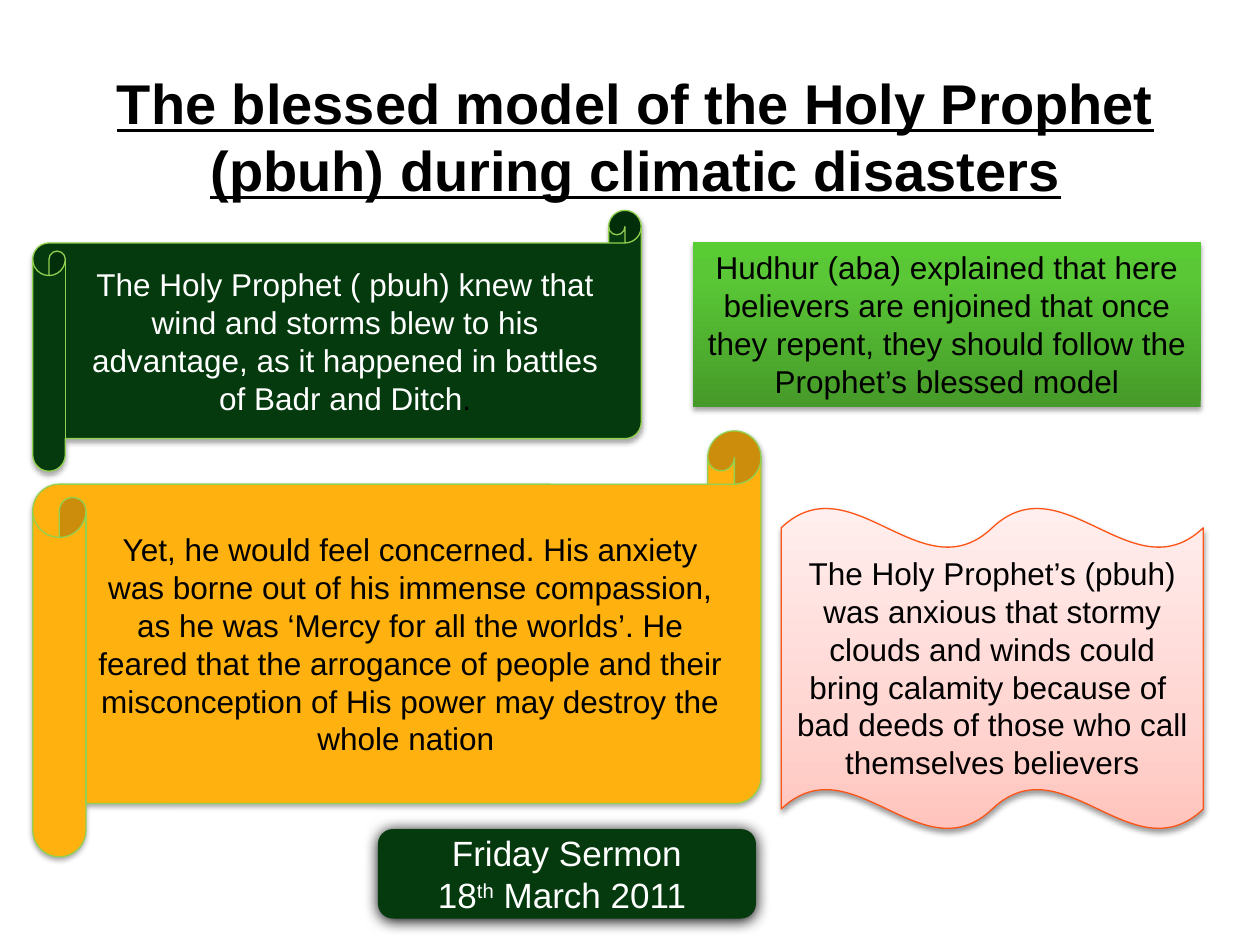
import copy
from dataclasses import dataclass
from typing import Optional

import lxml.etree
import pptx
import pptx.dml.color
import pptx.enum.shapes
import pptx.enum.text
import pptx.oxml.ns
import pptx.util

Inches = pptx.util.Inches
Pt = pptx.util.Pt
Kind = pptx.enum.shapes.MSO_SHAPE
Anchor = pptx.enum.text.MSO_ANCHOR
qn = pptx.oxml.ns.qn

COLORS = {
    "black": "000000", "white": "FFFFFF", "forest": "043A0D",
    "amber": "FFB10F", "lime": "92D050", "orange": "FE5517",
    "rose": "FFC4BD", "pink": "FFD5D1", "blush": "FFEFEE",
    "moss": "469A29", "leaf": "5AC836", "grass": "59CC33",
}


@dataclass(frozen=True)
class Span:
    text: str
    color: str = "black"
    raised: bool = False


@dataclass(frozen=True)
class Shadow:
    opacity: int = 35
    blur: float = 3.1
    distance: float = 1.8


@dataclass(frozen=True)
class Panel:
    kind: Kind
    place: tuple[float, float, float, float]
    paragraphs: list[list[Span]]
    fill: str = ""
    gradient: tuple[tuple[float, str], ...] = ()
    line: Optional[str] = None
    shadow: Shadow = Shadow()
    anchor: Anchor = Anchor.MIDDLE
    size: int = 18
    space_before: float = 0


PANELS = [
    Panel(Kind.HORIZONTAL_SCROLL, (0.26, 1.67, 4.83, 2.07),
          [[Span("The Holy Prophet ( pbuh) knew that wind and storms blew to his "
                 "advantage, as it happened in battles of Badr and Ditch", "white"),
            Span(".")]],
          fill="forest", line="lime"),
    Panel(Kind.HORIZONTAL_SCROLL, (0.26, 3.42, 5.78, 3.38),
          [[Span("Yet, he would feel concerned. His anxiety was borne out of his "
                 "immense compassion, as he was ‘Mercy for all the worlds’. He feared "
                 "that the arrogance of people and their misconception of His power "
                 "may destroy the whole nation ")]],
          fill="amber", line="lime"),
    Panel(Kind.ROUNDED_RECTANGLE, (3, 6.58, 3, 0.71),
          [[Span("Friday Sermon", "white")],
           [Span("18", "white"), Span("th", "white", raised=True),
            Span(" March 2011 ", "white")]],
          fill="forest", shadow=Shadow(100, 8.5, 1), size=20),
    Panel(Kind.DOUBLE_WAVE, (6.2, 4.03, 3.35, 2.55),
          [[Span("The Holy Prophet’s (pbuh) was anxious that stormy clouds and winds "
                 "could bring calamity because of  bad deeds of those who call "
                 "themselves believers")]],
          gradient=((0, "rose"), (0.35, "pink"), (1, "blush")), line="orange",
          shadow=Shadow(38, 3.1, 1.6), anchor=Anchor.TOP, space_before=5.4),
    Panel(Kind.RECTANGLE, (5.5, 1.92, 4.03, 1.31),
          [[Span("Hudhur (aba) explained that here believers are enjoined that once "
                 "they repent, they should follow the Prophet’s blessed model")]],
          gradient=((0, "moss"), (0.8, "leaf"), (1, "grass")), anchor=Anchor.TOP),
]


def rgb(name: str) -> pptx.dml.color.RGBColor:
    return pptx.dml.color.RGBColor.from_string(COLORS[name])


def style_run(run, size: float, color: str) -> None:
    run.font.name = "Arial"
    run.font.size = Pt(size)
    run.font.color.rgb = rgb(color)


def paint_gradient(shape, stops: tuple[tuple[float, str], ...]) -> None:
    """Fill from the bottom edge upwards."""
    shape.fill.gradient()
    shape.fill.gradient_angle = 90
    stop_list = shape._element.spPr.find(".//" + qn("a:gsLst"))
    while len(stop_list) < len(stops):
        stop_list.append(copy.deepcopy(stop_list[-1]))
    for stop, (position, color) in zip(shape.fill.gradient_stops, stops):
        stop.position = position
        stop.color.rgb = rgb(color)


def cast_shadow(shape, shadow: Shadow) -> None:
    """Add a soft black shadow falling straight down."""
    shape.shadow.inherit = False
    effects = shape._element.spPr.find(qn("a:effectLst"))
    outer = lxml.etree.SubElement(
        effects, qn("a:outerShdw"), blurRad=str(int(Pt(shadow.blur))),
        dist=str(int(Pt(shadow.distance))), dir="5400000", rotWithShape="0")
    tint = lxml.etree.SubElement(outer, qn("a:srgbClr"), val=COLORS["black"])
    lxml.etree.SubElement(tint, qn("a:alpha"), val=str(shadow.opacity * 1000))


def write_text(frame, panel: Panel) -> None:
    frame.word_wrap = True
    frame.vertical_anchor = panel.anchor
    for index, spans in enumerate(panel.paragraphs):
        para = frame.add_paragraph() if index else frame.paragraphs[0]
        para.alignment = pptx.enum.text.PP_ALIGN.CENTER
        if panel.space_before:
            para.space_before = Pt(panel.space_before)
        for span in spans:
            run = para.add_run()
            run.text = span.text
            style_run(run, panel.size, span.color)
            if span.raised:
                run.font._element.set("baseline", "30000")


def draw_panel(page, panel: Panel) -> None:
    shape = page.shapes.add_shape(panel.kind, *map(Inches, panel.place))
    if panel.gradient:
        paint_gradient(shape, panel.gradient)
    else:
        shape.fill.solid()
        shape.fill.fore_color.rgb = rgb(panel.fill)
    if panel.line:
        shape.line.color.rgb = rgb(panel.line)
        shape.line.width = Pt(0.75)
    else:
        shape.line.fill.background()
    cast_shadow(shape, panel.shadow)
    write_text(shape.text_frame, panel)


def draw_title(page, text: str) -> None:
    box = page.shapes.add_textbox(Inches(0.42), Inches(0.5), Inches(9.25), Inches(1))
    frame = box.text_frame
    frame.word_wrap = True
    frame.margin_left = frame.margin_right = frame.margin_bottom = 0
    frame.margin_top = Inches(0.04)
    frame.text = text
    para = frame.paragraphs[0]
    para.alignment = pptx.enum.text.PP_ALIGN.CENTER
    for run in para.runs:
        style_run(run, 32, "black")
        run.font.bold = run.font.underline = True


def main() -> None:
    deck = pptx.Presentation()
    deck.slide_width, deck.slide_height = Inches(10), Inches(7.5)
    page = deck.slides.add_slide(deck.slide_layouts[6])

    # Heading
    draw_title(page, "The blessed model of the Holy Prophet (pbuh) "
                     "during climatic disasters")
    # Message panels and date label
    for panel in PANELS:
        draw_panel(page, panel)

    deck.save("out.pptx")


if __name__ == "__main__":
    main()
